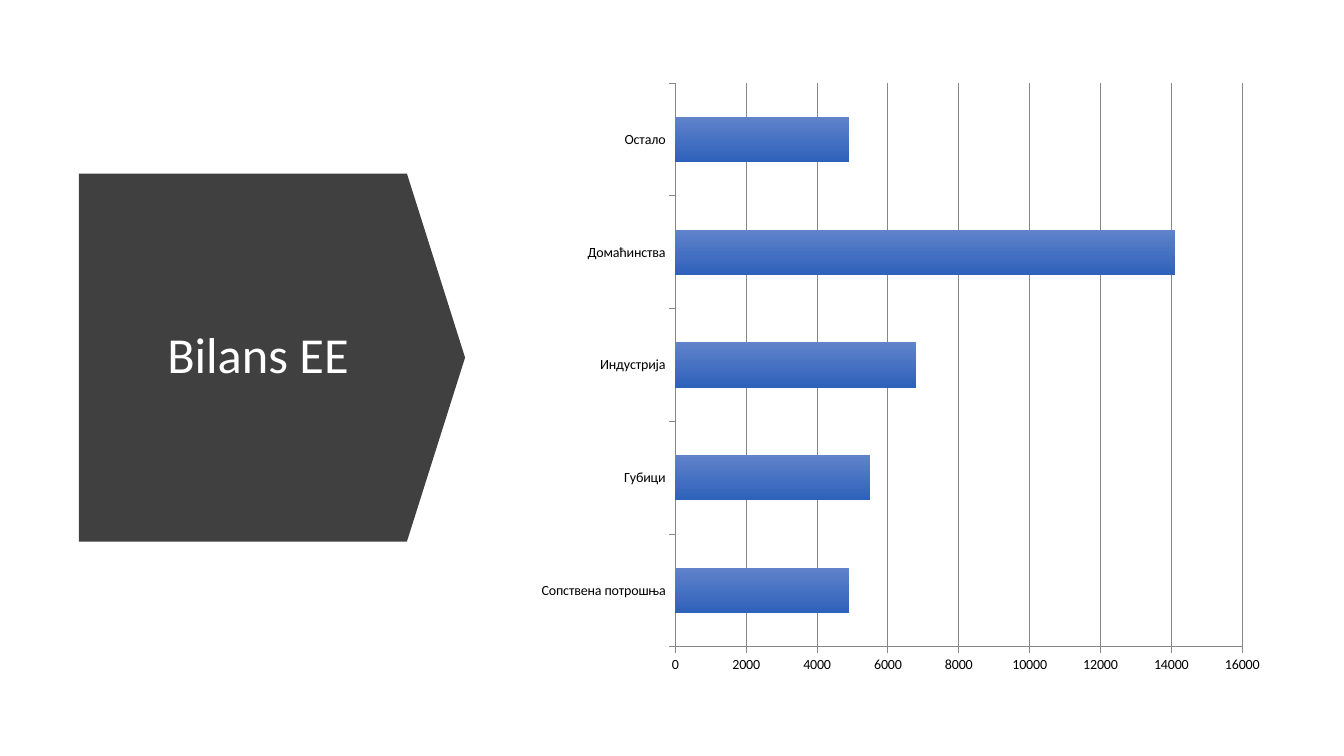
import pptx
import pptx.chart.data
import pptx.dml.color
import pptx.enum.chart
import pptx.enum.shapes
import pptx.enum.text
import pptx.util

Pt = pptx.util.Pt
FONT = "Calibri"
USE = {
    "Сопствена потрошња": 4900,
    "Губици": 5500,
    "Индустрија": 6800,
    "Домаћинства": 14100,
    "Остало": 4900,
}


def tint(code):
    return pptx.dml.color.RGBColor.from_string(code)


def style(item, **values):
    for name, value in values.items():
        setattr(item, name, value)


def banner(slide, box, title):
    """Draw a dark arrow that points right and fills the box, with a title."""
    left, top, width, height = box
    # A quarter turn swaps the sides about the shared centre.
    shift = (width - height) / 2
    arrow = slide.shapes.add_shape(
        pptx.enum.shapes.MSO_SHAPE.DOWN_ARROW,
        Pt(left + shift), Pt(top - shift), Pt(height), Pt(width))
    arrow.rotation = 270
    arrow.adjustments[0] = 1
    arrow.adjustments[1] = 0.158
    arrow.shadow.inherit = False
    arrow.fill.solid()
    arrow.fill.fore_color.rgb = tint("404040")
    arrow.line.fill.background()

    label = slide.shapes.add_textbox(
        Pt(left + 24.2), Pt(top + 30.8), Pt(207.4), Pt(height - 61.9))
    frame = label.text_frame
    style(frame, word_wrap=True,
          vertical_anchor=pptx.enum.text.MSO_ANCHOR.MIDDLE)
    para = frame.paragraphs[0]
    style(para, text=title, line_spacing=0.9,
          alignment=pptx.enum.text.PP_ALIGN.CENTER)
    style(para.runs[0].font, name=FONT, size=Pt(36))
    para.runs[0].font.color.rgb = tint("FFFFFF")


def bars(slide, box, values):
    data = pptx.chart.data.CategoryChartData()
    data.categories = list(values)
    data.add_series("Series 1", list(values.values()))
    chart = slide.shapes.add_chart(
        pptx.enum.chart.XL_CHART_TYPE.BAR_CLUSTERED,
        *map(Pt, box), data).chart
    style(chart, has_legend=False, has_title=False)
    style(chart.font, name=FONT, size=Pt(10))
    chart.font.color.rgb = tint("000000")

    plot = chart.plots[0]
    style(plot, gap_width=150, vary_by_categories=False)
    fill = plot.series[0].format.fill
    fill.gradient()
    fill.gradient_angle = 270
    for place, code in enumerate(("6083CB", "2E61BA")):
        stop = fill.gradient_stops[place]
        stop.position = place
        stop.color.rgb = tint(code)

    scale = chart.value_axis
    style(scale, minimum_scale=0, maximum_scale=16000, major_unit=2000,
          has_major_gridlines=True)
    for axis in (chart.category_axis, scale):
        style(axis, major_tick_mark=pptx.enum.chart.XL_TICK_MARK.OUTSIDE,
              minor_tick_mark=pptx.enum.chart.XL_TICK_MARK.NONE)
    for part in (chart.category_axis, scale, scale.major_gridlines):
        part.format.line.width = Pt(0.75)
        part.format.line.color.rgb = tint("868686")


def main():
    deck = pptx.Presentation()
    style(deck, slide_width=Pt(960), slide_height=Pt(540))
    slide = deck.slides.add_slide(deck.slide_layouts[6])
    banner(slide, (56.4, 124, 275.8, 262.8), "Bilans EE")
    bars(slide, (376.2, 50.7, 534.2, 438.5), USE)
    deck.save("out.pptx")


if __name__ == "__main__":
    main()
